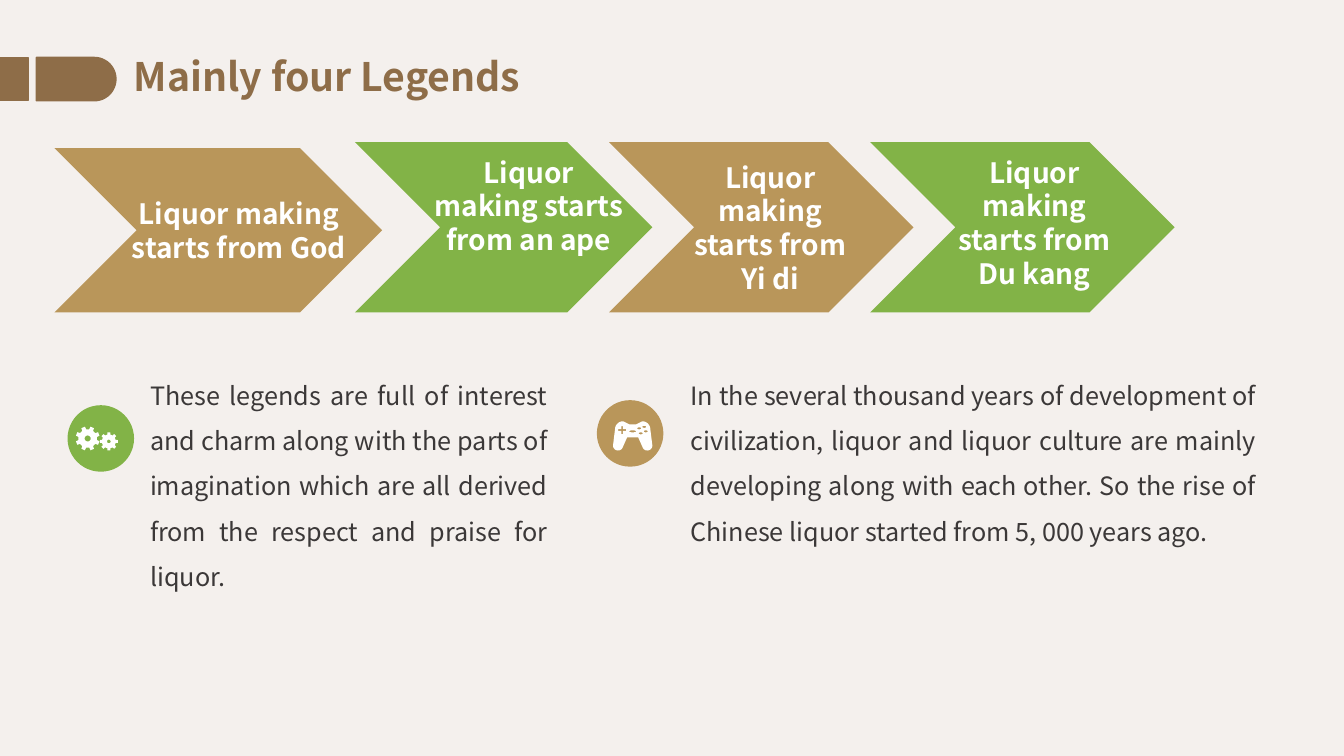
from dataclasses import dataclass
from math import cos, radians, sin

from pptx import Presentation
from pptx.dml.color import RGBColor
from pptx.enum.shapes import MSO_SHAPE
from pptx.enum.text import MSO_AUTO_SIZE, PP_ALIGN
from pptx.util import Emu, Pt

PX = 9144  # EMU in one px, 100 px to the inch
FONT = "Noto Sans CJK SC"
CREAM = RGBColor(0xF4, 0xF0, 0xED)
TAN = RGBColor(0xB9, 0x96, 0x5A)
GREEN = RGBColor(0x82, 0xB3, 0x47)
BROWN = RGBColor(0x8E, 0x6D, 0x48)
WHITE = RGBColor(0xFF, 0xFF, 0xFF)
INK = RGBColor(0x3B, 0x38, 0x38)

Point = tuple[float, float]
Ring = list[Point]


@dataclass
class Box:
    x: int
    y: int
    w: int
    h: int

    def emu(self) -> list[Emu]:
        return [Emu(n * PX) for n in (self.x, self.y, self.w, self.h)]


@dataclass
class Style:
    size: int
    color: RGBColor
    bold: bool = False
    align: PP_ALIGN = PP_ALIGN.LEFT
    space: float = 1.0


@dataclass
class Legend:
    arrow: Box
    label: Box
    text: str
    color: RGBColor


@dataclass
class Note:
    dot: Box
    body: Box
    text: str
    color: RGBColor


TITLE = Style(28, BROWN, bold=True)
LABEL = Style(20, WHITE, bold=True, align=PP_ALIGN.CENTER)
BODY = Style(18, INK, align=PP_ALIGN.JUSTIFY, space=1.5)

LEGENDS = [
    Legend(Box(54, 147, 325, 163), Box(114, 190, 246, 77),
           "Liquor making starts from God", TAN),
    Legend(Box(352, 141, 295, 169), Box(419, 149, 211, 145),
           "Liquor making starts from an ape", GREEN),
    Legend(Box(604, 141, 302, 169), Box(670, 154, 188, 145),
           "Liquor making starts from Yi di", TAN),
    Legend(Box(863, 141, 302, 169), Box(935, 149, 182, 145),
           "Liquor making starts from Du kang", GREEN),
]
NOTES = [
    Note(Box(67, 402, 66, 66), Box(139, 357, 414, 237),
         "These legends are full of interest and charm along with the parts of "
         "imagination which are all derived from the respect and praise for liquor.",
         GREEN),
    Note(Box(592, 397, 66, 66), Box(675, 357, 581, 237),
         "In the several thousand years of development of civilization, liquor and "
         "liquor culture are mainly developing along with each other. So the rise "
         "of Chinese liquor started from 5, 000 years ago.", TAN),
]


def paint(shape, color: RGBColor, edge: bool = False) -> None:
    shape.shadow.inherit = False
    shape.fill.solid()
    shape.fill.fore_color.rgb = color
    if edge:
        shape.line.color.rgb = color
        shape.line.width = Pt(1)
    else:
        shape.line.fill.background()


def block(slide, kind: MSO_SHAPE, box: Box, color: RGBColor, edge: bool = False) -> None:
    paint(slide.shapes.add_shape(kind, *box.emu()), color, edge)


def write(slide, box: Box, text: str, style: Style) -> None:
    frame = slide.shapes.add_textbox(*box.emu()).text_frame
    frame.word_wrap = True
    frame.auto_size = MSO_AUTO_SIZE.SHAPE_TO_FIT_TEXT
    para = frame.paragraphs[0]
    para.alignment = style.align
    para.line_spacing = style.space
    run = para.add_run()
    run.text = text
    font = run.font
    font.name, font.size, font.bold = FONT, Pt(style.size), style.bold
    font.color.rgb = style.color


def trace(slide, rings: list[Ring], color: RGBColor, edge: bool = False) -> None:
    """Draw an outline; every ring after the first is a hole."""
    scaled = [[(x * PX, y * PX) for x, y in ring] for ring in rings]
    pen = slide.shapes.build_freeform(*scaled[0][0])
    pen.add_line_segments(scaled[0][1:])
    for ring in scaled[1:]:
        pen.move_to(*ring[0])
        pen.add_line_segments(ring[1:])
    paint(pen.convert_to_shape(), color, edge)


def polar(x: float, y: float, r: float, angle: float) -> Point:
    return x + r * cos(radians(angle)), y + r * sin(radians(angle))


def arc(x: float, y: float, r: float, start: int, end: int) -> Ring:
    steps = 24
    return [polar(x, y, r, start + (end - start) * i / steps) for i in range(steps + 1)]


def oval(x: float, y: float, w: float, h: float) -> Ring:
    return [(x + a * w / 2, y + b * h / 2) for a, b in arc(0, 0, 1, 0, 360)]


def gear(x: float, y: float, r: float, hole: float, turn: float) -> list[Ring]:
    tooth = [(-13, 0.77), (-9, 1), (9, 1), (13, 0.77)]
    rim = [polar(x, y, r * k, turn + 45 * i + a) for i in range(8) for a, k in tooth]
    return [rim, arc(x, y, hole, 0, 360)]


def pad() -> list[Ring]:
    shell = [*arc(618, 426, 8, 180, 270), (624, 421), (631, 421),
             *arc(637, 426, 8, 270, 360), *arc(642, 442, 5, 0, 150),
             (633, 434), (622, 434), *arc(613, 442, 5, 30, 180)]
    near, far = 0.8, 4
    arms = [(-near, -far), (near, -far), (near, -near), (far, -near), (far, near),
            (near, near), (near, far), (-near, far), (-near, near), (-far, near),
            (-far, -near), (-near, -near)]
    cross = [(617 + x, 426.7 + y) for x, y in arms]
    keys = [(634, 425), (635.5, 430), (639, 423.5), (640.5, 428)]
    return [shell, cross, oval(627.5, 428, 7, 2), *(oval(x, y, 4, 2) for x, y in keys)]


def main() -> None:
    deck = Presentation()
    deck.slide_width, deck.slide_height = Emu(1333 * PX), Emu(750 * PX)
    slide = deck.slides.add_slide(deck.slide_layouts[6])
    slide.background.fill.solid()
    slide.background.fill.fore_color.rgb = CREAM

    # Row of legends
    for item in LEGENDS:
        block(slide, MSO_SHAPE.CHEVRON, item.arrow, item.color)
    for item in LEGENDS:
        write(slide, item.label, item.text, LABEL)

    # Notes with round icons
    for note in NOTES:
        block(slide, MSO_SHAPE.OVAL, note.dot, note.color)
        write(slide, note.body, note.text, BODY)
    for icon in (gear(87, 435, 12, 3, 22.5), gear(108, 438, 9, 1.8, 0), pad()):
        trace(slide, icon, WHITE)

    # Title with its tab
    tab = [(36, 57), *arc(93.5, 78.5, 21.5, -90, 90), (36, 100)]
    trace(slide, [tab], BROWN, edge=True)
    block(slide, MSO_SHAPE.RECTANGLE, Box(0, 57, 28, 43), BROWN, edge=True)
    write(slide, Box(123, 47, 405, 57), "Mainly four Legends", TITLE)

    deck.save("out.pptx")


if __name__ == "__main__":
    main()
